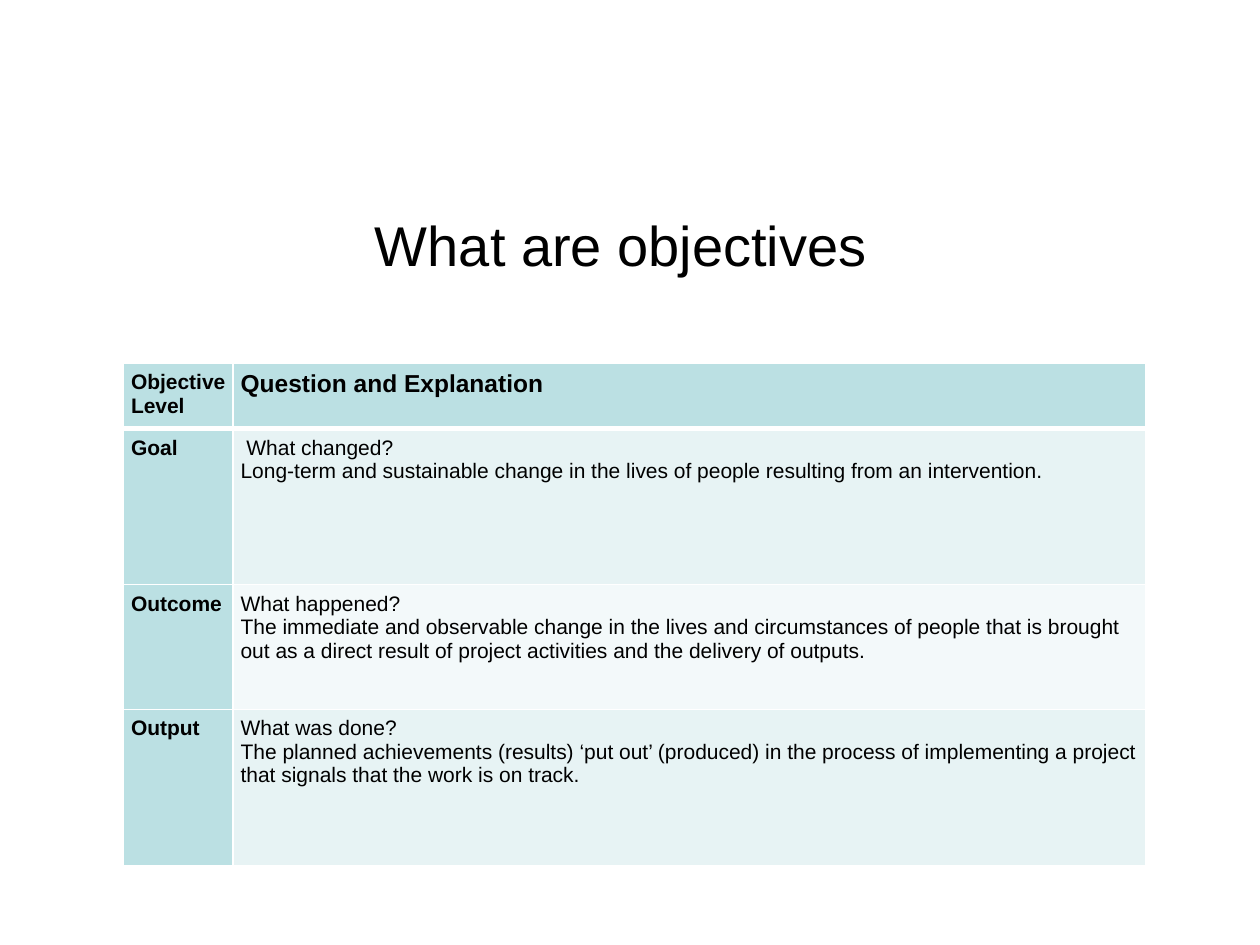
from lxml.etree import SubElement
from pptx import Presentation
from pptx.dml.color import RGBColor
from pptx.enum.text import MSO_ANCHOR, PP_ALIGN
from pptx.oxml.ns import qn
from pptx.util import Inches, Pt

TEAL, PALE, MIST = "BBE0E3", "E7F3F4", "F3F9FA"
WIDTHS = [0.87, 7.24]
HEIGHTS = [0.52, 1.24, 0.99, 1.24]
ROWS = [
    ("Objective Level", ["Question and Explanation"]),
    ("Goal", [
        " What changed?",
        "Long-term and sustainable change in the lives of people resulting "
        "from an intervention."]),
    ("Outcome", [
        "What happened?",
        "The immediate and observable change in the lives and circumstances "
        "of people that is brought out as a direct result of project "
        "activities and the delivery of outputs."]),
    ("Output", [
        "What was done?",
        "The planned achievements (results) ‘put out’ (produced) in the "
        "process of implementing a project that signals that the work is "
        "on track."]),
]


def color(code):
    return RGBColor.from_string(code)


def write(frame, lines, size=12, bold=False, align=PP_ALIGN.LEFT):
    frame.word_wrap = True
    for num, line in enumerate(lines):
        para = frame.add_paragraph() if num else frame.paragraphs[0]
        para.alignment = align
        run = para.add_run()
        run.text = line
        run.font.name = "Arial"
        run.font.size = Pt(size)
        run.font.bold = bold
        run.font.color.rgb = color("000000")


def border(cell, top=1, bottom=1):
    props = cell._tc.get_or_add_tcPr()
    for side, width in (("L", 1), ("R", 1), ("T", top), ("B", bottom)):
        line = SubElement(props, qn(f"a:ln{side}"), w=str(Pt(width)))
        fill = SubElement(line, qn("a:solidFill"))
        SubElement(fill, qn("a:srgbClr"), val="FFFFFF")


def paint(cell, fill):
    cell.fill.solid()
    cell.fill.fore_color.rgb = color(fill)
    cell.margin_left = cell.margin_top = cell.margin_bottom = Inches(0.06)
    cell.margin_right = Inches(0.05)


def title(slide, text):
    box = slide.shapes.add_textbox(
        Inches(0.43), Inches(1.31), Inches(9), Inches(1.25))
    box.text_frame.vertical_anchor = MSO_ANCHOR.MIDDLE
    write(box.text_frame, [text], size=32, align=PP_ALIGN.CENTER)


def grid(slide):
    table = slide.shapes.add_table(
        len(ROWS), len(WIDTHS), Inches(0.98), Inches(2.88),
        Inches(sum(WIDTHS)), Inches(sum(HEIGHTS))).table
    for col, width in zip(table.columns, WIDTHS):
        col.width = Inches(width)
    for row, height in zip(table.rows, HEIGHTS):
        row.height = Inches(height)
    for r, (level, lines) in enumerate(ROWS):
        head = r == 0
        for c, words in enumerate(([level], lines)):
            cell = table.cell(r, c)
            border(cell, top=3 if r == 1 else 1, bottom=3 if head else 1)
            paint(cell, TEAL if head or c == 0 else PALE if r % 2 else MIST)
            write(cell.text_frame, words, size=14 if head and c else 12,
                  bold=head or c == 0)


def main():
    deck = Presentation()
    deck.slide_width, deck.slide_height = Inches(10), Inches(7.5)
    slide = deck.slides.add_slide(deck.slide_layouts[6])
    title(slide, "What are objectives")
    grid(slide)
    deck.save("out.pptx")


if __name__ == "__main__":
    main()
